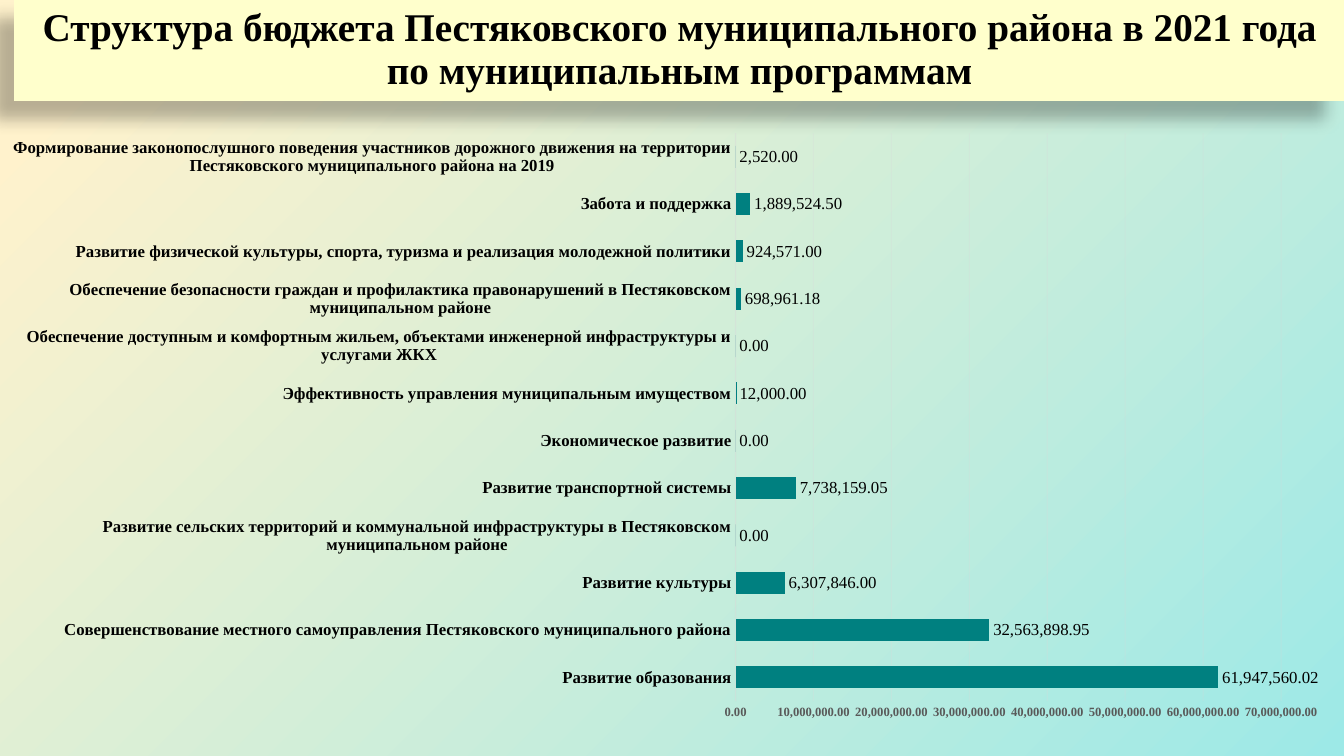
from lxml import etree
from pptx import Presentation
from pptx import util as u
from pptx.chart.data import CategoryChartData
from pptx.dml.color import RGBColor
from pptx.enum import chart as ch, text
from pptx.oxml import parse_xml
from pptx.oxml.ns import nsdecls, qn

COLORS = {
    "aqua": "9DE9E7", "cream": "FFF2CC", "title": "FFFFCC", "black": "000000",
    "bar": "008080", "grid": "D9D9D9", "scale": "595959",
}
FONT = "Times New Roman"
NUMBER_FORMAT = "#,##0.00"
PROGRAMS = [
    ("Развитие образования", 61947560.02),
    ("Совершенствование местного самоуправления Пестяковского муниципального района", 32563898.95),
    ("Развитие культуры", 6307846),
    ("Развитие сельских территорий и коммунальной инфраструктуры в Пестяковском муниципальном районе", 0),
    ("Развитие транспортной системы", 7738159.05),
    ("Экономическое развитие", 0),
    ("Эффективность управления муниципальным имуществом", 12000),
    ("Обеспечение доступным и комфортным жильем, объектами инженерной инфраструктуры и услугами ЖКХ", 0),
    ("Обеспечение безопасности граждан и профилактика правонарушений в Пестяковском муниципальном районе", 698961.18),
    ("Развитие физической культуры, спорта, туризма и реализация молодежной политики", 924571),
    ("Забота и поддержка", 1889524.5),
    ("Формирование законопослушного поведения участников дорожного движения на территории "
     "Пестяковского муниципального района на 2019", 2520),
]


def color(name):
    return RGBColor.from_string(COLORS[name])


def assign(target, **values):
    for name, value in values.items():
        setattr(target, name, value)


def set_font(font, size, color_name="black", bold=False):
    assign(font, name=FONT, size=u.Pt(size), bold=bold)
    font.color.rgb = color(color_name)


def set_faint_line(line, width):
    """Light grey line that is mostly transparent."""
    line.width = u.Pt(width)
    line.color.rgb = color("grid")
    rgb = line.fill._xPr.find(".//" + qn("a:srgbClr"))
    etree.SubElement(rgb, qn("a:alpha"), val="25000")


class BudgetSlide:
    def __init__(self, presentation):
        self.slide = presentation.slides.add_slide(presentation.slide_layouts[5])

    def background(self):
        fill = self.slide.background.fill
        fill.gradient()
        for stop, name, position in zip(fill.gradient_stops, ("aqua", "cream"), (0, 0.93)):
            stop.color.rgb = color(name)
            stop.position = position
        gradient = self.slide.element.find(".//" + qn("a:gradFill"))
        gradient.replace(gradient.find(qn("a:lin")), parse_xml(
            f'<a:path {nsdecls("a")} path="circle"><a:fillToRect l="100000" t="100000"/></a:path>'))

    def title(self, wording, box):
        shape = self.slide.shapes.title
        assign(shape, **dict(zip(("left", "top", "width", "height"), map(u.Inches, box))))
        shape.fill.solid()
        shape.fill.fore_color.rgb = color("title")
        shape._element.spPr.append(parse_xml(
            f'<a:effectLst {nsdecls("a")}><a:outerShdw blurRad="{u.Pt(11.8)}" dist="{u.Pt(19.7)}" '
            f'dir="{141 * 60000}" algn="t" rotWithShape="0"><a:srgbClr val="{COLORS["black"]}">'
            '<a:alpha val="28000"/></a:srgbClr></a:outerShdw></a:effectLst>'))
        frame = shape.text_frame
        frame.text = wording
        assign(frame, word_wrap=True, auto_size=text.MSO_AUTO_SIZE.NONE,
               vertical_anchor=text.MSO_ANCHOR.MIDDLE)
        paragraph = frame.paragraphs[0]
        assign(paragraph, alignment=text.PP_ALIGN.CENTER, line_spacing=0.9)
        set_font(paragraph.runs[0].font, 28, bold=True)

    def bar_chart(self, rows, box):
        data = CategoryChartData(number_format=NUMBER_FORMAT)
        data.categories = [name for name, _ in rows]
        data.add_series("Series 1", [value for _, value in rows])
        chart = self.slide.shapes.add_chart(
            ch.XL_CHART_TYPE.BAR_CLUSTERED, *map(u.Inches, box), data).chart
        assign(chart, has_legend=False, has_title=False)
        set_font(chart.font, 10)
        self.axes(chart)
        self.plot_area(chart, x=0.542, y=0.02, w=0.41, h=0.93)

        plot = chart.plots[0]
        assign(plot, gap_width=115, overlap=-20, vary_by_categories=False, has_data_labels=True)
        bars = plot.series[0].format.fill
        bars.solid()
        bars.fore_color.rgb = color("bar")
        labels = plot.data_labels
        assign(labels, show_value=True, position=ch.XL_LABEL_POSITION.OUTSIDE_END,
               number_format=NUMBER_FORMAT, number_format_is_linked=False)
        set_font(labels.font, 12)

    def axes(self, chart):
        names, scale = chart.category_axis, chart.value_axis
        for axis in (names, scale):
            assign(axis, major_tick_mark=ch.XL_TICK_MARK.NONE, minor_tick_mark=ch.XL_TICK_MARK.NONE)
        set_font(names.tick_labels.font, 12, bold=True)
        set_faint_line(names.format.line, 1)
        assign(scale, minimum_scale=0, maximum_scale=70000000, major_unit=10000000,
               has_major_gridlines=True)
        assign(scale.tick_labels, number_format=NUMBER_FORMAT, number_format_is_linked=False)
        set_font(scale.tick_labels.font, 9, "scale", bold=True)
        scale.format.line.fill.background()
        set_faint_line(scale.major_gridlines.format.line, 0.75)

    def plot_area(self, chart, **fractions):
        """Fix the inner plot area, in fractions of the chart."""
        area = chart._chartSpace.chart.plotArea
        for old in area.findall(qn("c:layout")):
            area.remove(old)
        sizes = "".join(f'<c:{name} val="{value}"/>' for name, value in fractions.items())
        area.insert(0, parse_xml(
            f'<c:layout {nsdecls("c")}><c:manualLayout><c:layoutTarget val="inner"/>'
            f'<c:xMode val="edge"/><c:yMode val="edge"/>{sizes}</c:manualLayout></c:layout>'))


def main():
    presentation = Presentation()
    assign(presentation, slide_width=u.Inches(13.33), slide_height=u.Inches(7.5))
    budget = BudgetSlide(presentation)
    budget.background()
    budget.title("Структура бюджета Пестяковского муниципального района в 2021 года "
                 "по муниципальным программам", (0.14, 0, 13.2, 1))
    budget.bar_chart(PROGRAMS, (0.13, 1.2, 13.21, 6.06))
    presentation.save("out.pptx")


if __name__ == "__main__":
    main()
